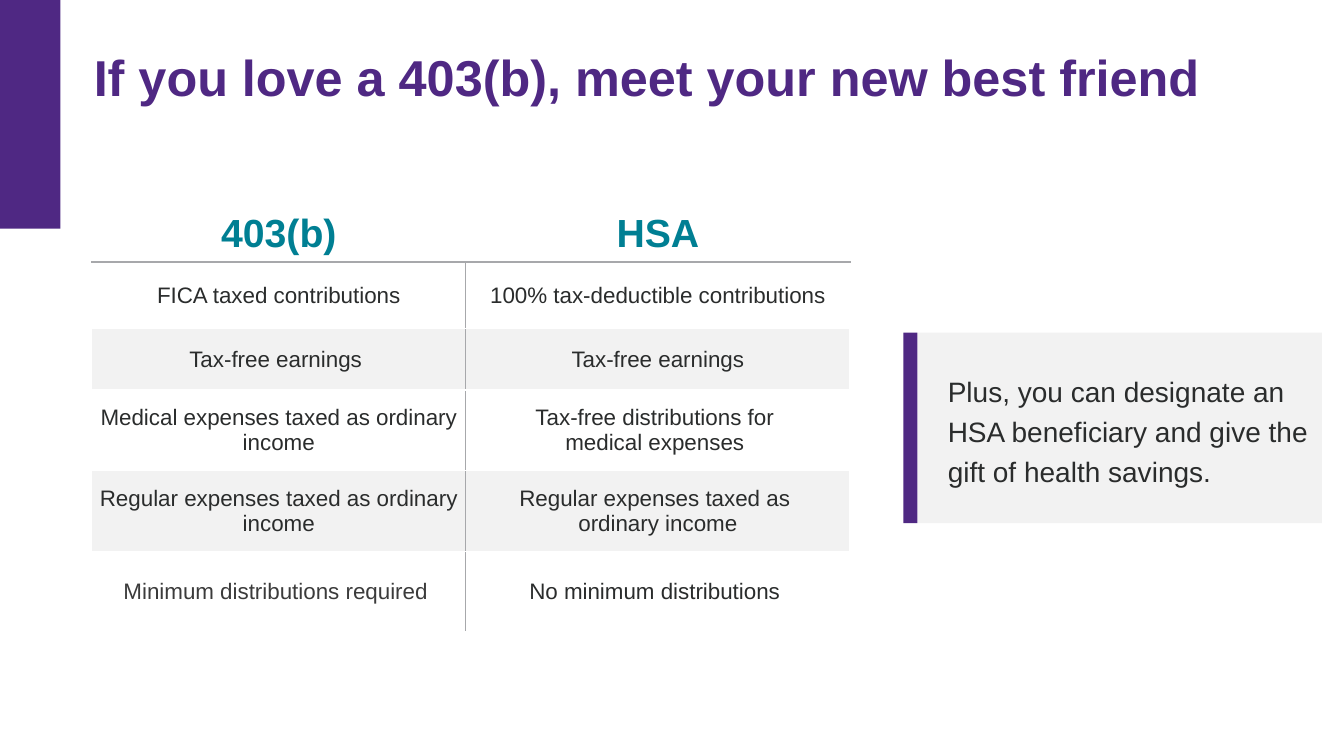
import pptx
import pptx.dml.color
import pptx.enum.shapes
import pptx.enum.text
import pptx.util
from lxml import etree
from pptx.oxml import ns

Inches = pptx.util.Inches
Pt = pptx.util.Pt
RGB = pptx.dml.color.RGBColor.from_string

THEME = {
    "font": "Arial",
    "purple": "4F2883",
    "teal": "007F93",
    "ink": "2A2C2C",
    "soft_ink": "3B3B3B",
    "band": "F2F2F2",
    "white": "FFFFFF",
    "rule": "A7A8AB",
    "title": 36,
    "heading": 28,
    "callout": 20,
    "body": 16,
}


def format_text(frame, text, size, color, bold=False, **paragraph_format):
    paragraph = frame.paragraphs[0]
    paragraph.text = text
    for name, value in paragraph_format.items():
        setattr(paragraph, name, value)
    font_format = {"name": THEME["font"], "size": Pt(THEME[size]), "bold": bold}
    for run in paragraph.runs:
        for name, value in font_format.items():
            setattr(run.font, name, value)
        run.font.color.rgb = RGB(THEME[color])


def add_block(left, top, width, height, color):
    block = slide.shapes.add_shape(
        pptx.enum.shapes.MSO_SHAPE.RECTANGLE,
        Inches(left), Inches(top), Inches(width), Inches(height))
    block.shadow.inherit = False
    block.fill.solid()
    block.fill.fore_color.rgb = RGB(THEME[color])
    block.line.fill.background()
    return block


deck = pptx.Presentation()
deck.slide_width = Inches(13.33)
deck.slide_height = Inches(7.5)
slide = deck.slides.add_slide(deck.slide_layouts[5])

add_block(0, 0, 0.6, 2.27, "purple")

headline = slide.shapes.title
headline_place = {"left": 0.93, "top": 0.4, "width": 12.32, "height": 0.63}
for name, value in headline_place.items():
    setattr(headline, name, Inches(value))
headline_frame = {
    "margin_left": 0, "margin_right": 0, "margin_top": 0, "margin_bottom": 0,
    "word_wrap": True,
    "vertical_anchor": pptx.enum.text.MSO_ANCHOR.TOP,
    "auto_size": pptx.enum.text.MSO_AUTO_SIZE.SHAPE_TO_FIT_TEXT,
}
for name, value in headline_frame.items():
    setattr(headline.text_frame, name, value)
format_text(headline.text_frame, "If you love a 403(b), meet your new best friend",
            "title", "purple", True, line_spacing=1.1,
            alignment=pptx.enum.text.PP_ALIGN.LEFT)

comparison = [
    ("403(b)", "HSA"),
    ("FICA taxed contributions", "100% tax-deductible contributions"),
    ("Tax-free earnings ", "Tax-free earnings"),
    ("Medical expenses taxed as ordinary income",
     "Tax-free distributions for \nmedical expenses "),
    ("Regular expenses taxed as ordinary income",
     "Regular expenses taxed as \nordinary income"),
    ("Minimum distributions required ", "No minimum distributions "),
]
column_widths = [3.71, 3.81]
row_heights = [0.55, 0.66, 0.61, 0.8, 0.8, 0.8]

table = slide.shapes.add_table(
    len(row_heights), len(column_widths), Inches(0.91), Inches(2.05),
    Inches(sum(column_widths)), Inches(sum(row_heights))).table
table.first_row = False
table.horz_banding = False
for column, width in zip(table.columns, column_widths):
    column.width = Inches(width)
for row, height in zip(table.rows, row_heights):
    row.height = Inches(height)

for row_index, entries in enumerate(comparison):
    is_heading = row_index == 0
    for column_index, entry in enumerate(entries):
        cell = table.cell(row_index, column_index)
        cell.vertical_anchor = pptx.enum.text.MSO_ANCHOR.MIDDLE
        for side in ("left", "right", "top", "bottom"):
            setattr(cell, "margin_" + side, Inches(0 if is_heading else 0.05))

        if is_heading:
            borders = {"lnL": "white", "lnR": "white", "lnT": "white", "lnB": "rule"}
        else:
            borders = {"lnR": "rule"} if column_index == 0 else {"lnL": "rule"}
            if row_index == 1:
                borders["lnT"] = "rule"
        for edge, color in borders.items():
            line = etree.SubElement(cell._tc.get_or_add_tcPr(), ns.qn("a:" + edge), w=str(Pt(1)))
            fill = etree.SubElement(line, ns.qn("a:solidFill"))
            etree.SubElement(fill, ns.qn("a:srgbClr"), val=THEME[color])

        if is_heading:
            cell.fill.background()
            size, ink = "heading", "teal"
        else:
            cell.fill.solid()
            cell.fill.fore_color.rgb = RGB(THEME["white" if row_index % 2 else "band"])
            is_soft = (row_index, column_index) == (len(comparison) - 1, 0)
            size, ink = "body", "soft_ink" if is_soft else "ink"
        format_text(cell.text_frame, entry, size, ink, is_heading,
                    alignment=pptx.enum.text.PP_ALIGN.CENTER)

callout = add_block(9.1, 3.3, 4.01, 1.89, "band")
callout_frame = {
    "margin_left": Inches(0.3), "margin_right": Inches(0.1),
    "margin_top": Inches(0.05), "margin_bottom": Inches(0.05),
    "word_wrap": True,
    "vertical_anchor": pptx.enum.text.MSO_ANCHOR.MIDDLE,
}
for name, value in callout_frame.items():
    setattr(callout.text_frame, name, value)
format_text(callout.text_frame,
            "Plus, you can designate an HSA beneficiary and give the gift of health savings. ",
            "callout", "ink", line_spacing=1.2, space_after=Pt(40),
            alignment=pptx.enum.text.PP_ALIGN.LEFT)
add_block(8.96, 3.3, 0.14, 1.89, "purple")

deck.save("out.pptx")
